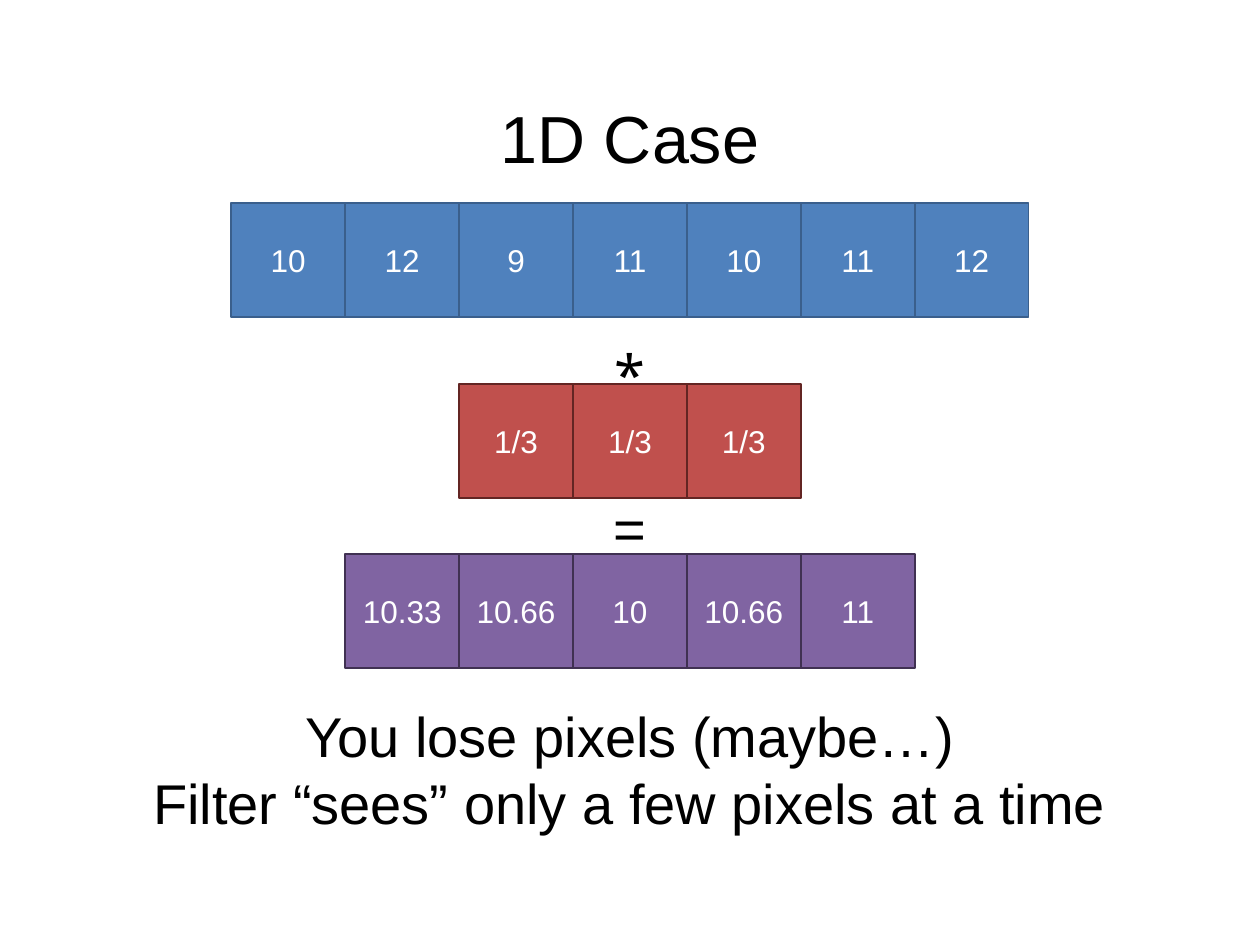
import dataclasses

import pptx
import pptx.dml.color
import pptx.enum.shapes
import pptx.enum.text
import pptx.util

WIDTH, HEIGHT = 10, 7.5
CELL = 0.904  # side of one pixel square


@dataclasses.dataclass(frozen=True)
class Theme:
    font: str = "Arial"
    text: str = "000000"
    cell_text: str = "FFFFFF"
    title_size: int = 38
    body_size: int = 32
    cell_size: int = 18
    line_width: float = 1
    # fill and outline of each row
    signal: tuple = ("4F81BD", "3A5F8C")
    kernel: tuple = ("C0504D", "632523")
    result: tuple = ("8064A2", "403152")


THEME = Theme()


def color(value):
    return pptx.dml.color.RGBColor.from_string(value)


def centered_box(top, width, height):
    """Left, top, width and height of a box centred across the slide."""
    lengths = ((WIDTH - width) / 2, top, width, height)
    return [pptx.util.Inches(length) for length in lengths]


def write_lines(shape, lines, size, text_color, anchor, line_spacing=None):
    frame = shape.text_frame
    frame.text = "\n".join(lines)
    frame_format = {
        "word_wrap": True,
        "auto_size": pptx.enum.text.MSO_AUTO_SIZE.NONE,
        "vertical_anchor": anchor,
    }
    for name, value in frame_format.items():
        setattr(frame, name, value)
    font_format = {"name": THEME.font, "size": pptx.util.Pt(size)}
    for paragraph in frame.paragraphs:
        paragraph.alignment = pptx.enum.text.PP_ALIGN.CENTER
        paragraph.line_spacing = line_spacing
        font = paragraph.runs[0].font
        for name, value in font_format.items():
            setattr(font, name, value)
        font.color.rgb = color(text_color)


def add_title(slide, text):
    title = slide.shapes.title
    box = centered_box(0.4, 8.62, 1.45)
    for name, value in zip(("left", "top", "width", "height"), box):
        setattr(title, name, value)
    write_lines(title, [text], THEME.title_size, THEME.text,
                pptx.enum.text.MSO_ANCHOR.MIDDLE, 0.9)


def add_pixel_row(slide, values, top, colors):
    """Group of touching squares, centred across the slide."""
    fill, outline = colors
    group = slide.shapes.add_group_shape()
    left = (WIDTH - CELL * len(values)) / 2
    for column, value in enumerate(values):
        box = (left + column * CELL, top, CELL, CELL)
        cell = group.shapes.add_shape(
            pptx.enum.shapes.MSO_SHAPE.RECTANGLE,
            *[pptx.util.Inches(length) for length in box])
        cell.shadow.inherit = False
        cell.fill.solid()
        cell.fill.fore_color.rgb = color(fill)
        cell.line.color.rgb = color(outline)
        cell.line.width = pptx.util.Pt(THEME.line_width)
        write_lines(cell, [value], THEME.cell_size, THEME.cell_text,
                    pptx.enum.text.MSO_ANCHOR.MIDDLE)


def add_text(slide, lines, top, width, height):
    box = slide.shapes.add_textbox(*centered_box(top, width, height))
    write_lines(box, lines, THEME.body_size, THEME.text,
                pptx.enum.text.MSO_ANCHOR.TOP)


def main():
    presentation = pptx.Presentation()
    presentation.slide_width = pptx.util.Inches(WIDTH)
    presentation.slide_height = pptx.util.Inches(HEIGHT)
    slide = presentation.slides.add_slide(presentation.slide_layouts[5])

    add_title(slide, "1D Case")

    # Signal, filter and filtered signal
    rows = (
        ("10 12 9 11 10 11 12", 1.61, THEME.signal),
        ("1/3 1/3 1/3", 3.05, THEME.kernel),
        ("10.33 10.66 10 10.66 11", 4.4, THEME.result),
    )
    for values, top, colors in rows:
        add_pixel_row(slide, values.split(), top, colors)

    # Operators between the rows
    for operator, top in (("⁎", 2.42), ("=", 3.87)):
        add_text(slide, [operator], top, 2.12, 0.64)

    # Conclusion
    add_text(slide, ["You lose pixels (maybe…)",
                     "Filter “sees” only a few pixels at a time"],
             5.52, 9.14, 1.18)

    presentation.save("out.pptx")


if __name__ == "__main__":
    main()
